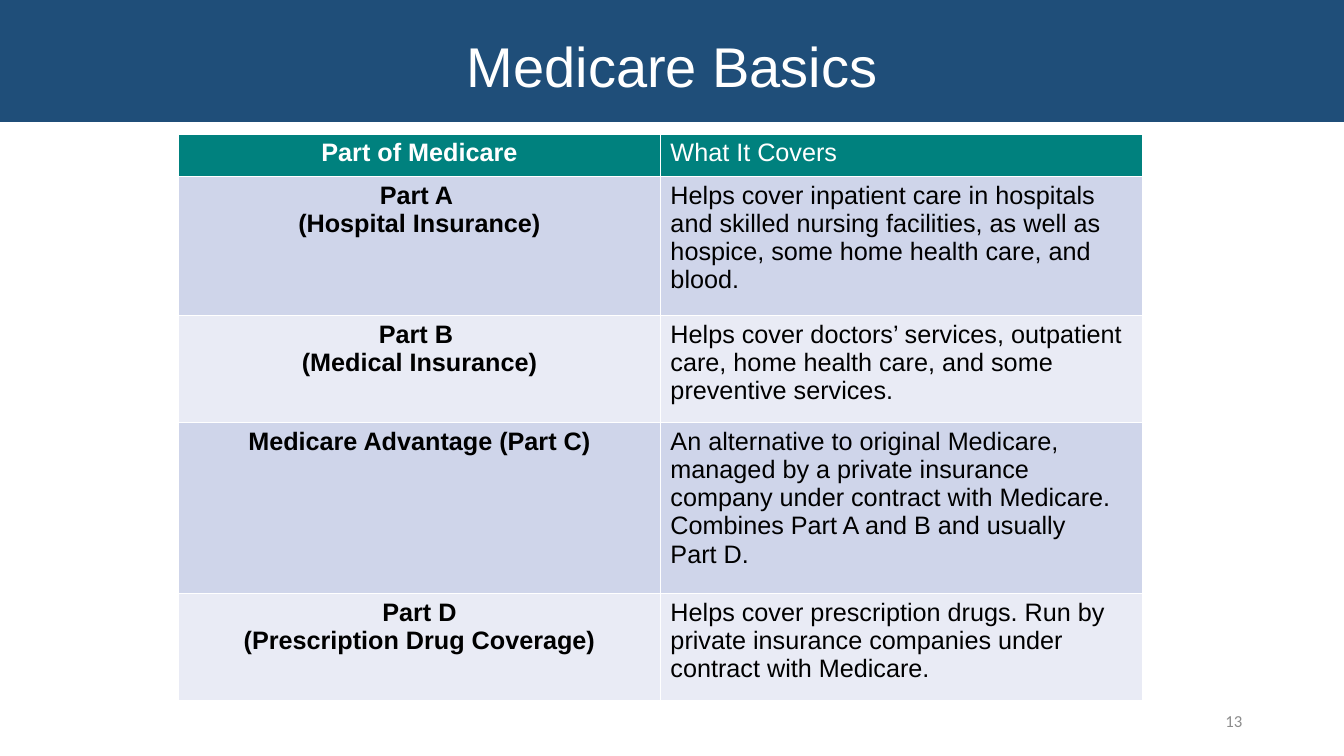
from pptx import Presentation
from pptx.dml.color import RGBColor
from pptx.enum.text import MSO_ANCHOR as Anchor, PP_ALIGN as Align
from pptx.util import Inches, Pt

NAVY = RGBColor(0x1F, 0x4E, 0x79)
TEAL = RGBColor(0x00, 0x81, 0x7E)
BLUE_BAND = RGBColor(0xCF, 0xD5, 0xEA)
PALE_BAND = RGBColor(0xE9, 0xEB, 0xF5)
WHITE = RGBColor(0xFF, 0xFF, 0xFF)
BLACK = RGBColor(0x00, 0x00, 0x00)
GRAY = RGBColor(0x8C, 0x8C, 0x8C)

ROWS = [
    (0.42, "Part of Medicare", "What It Covers"),
    (1.38, "Part A \n(Hospital Insurance)",
     "Helps cover inpatient care in hospitals and skilled nursing facilities, "
     "as well as hospice, some home health care, and blood."),
    (1.06, "Part B \n(Medical Insurance)",
     "Helps cover doctors’ services, outpatient care, home health care, "
     "and some preventive services."),
    (1.7, "Medicare Advantage (Part C)",
     "An alternative to original Medicare, managed by a private insurance "
     "company under contract with Medicare. Combines Part A and B and usually \nPart D."),
    (1.06, "Part D\n(Prescription Drug Coverage)",
     "Helps cover prescription drugs. Run by private insurance companies "
     "under contract with Medicare."),
]


def write(frame, text, size=18, color=BLACK, bold=False, align=Align.LEFT, font="Arial"):
    para = frame.paragraphs[0]
    para.text = text
    para.alignment = align
    for span in para.runs:
        span.font.name = font
        span.font.size = Pt(size)
        span.font.bold = bold
        span.font.color.rgb = color


deck = Presentation()
deck.slide_width = Inches(13.33)
deck.slide_height = Inches(7.5)
page = deck.slides.add_slide(deck.slide_layouts[5])

title = page.shapes.title
title.left, title.top = Inches(0), Inches(0)
title.width, title.height = Inches(13.33), Inches(1.21)
title.fill.solid()
title.fill.fore_color.rgb = NAVY
title.text_frame.vertical_anchor = Anchor.MIDDLE
title.text_frame.margin_top = Inches(0.12)
title.text_frame.margin_bottom = Inches(0.04)
write(title.text_frame, "Medicare Basics", size=40, color=WHITE, align=Align.CENTER)

table = page.shapes.add_table(
    len(ROWS), 2, Inches(1.77), Inches(1.33), Inches(9.56), Inches(5.62)
).table
for column in table.columns:
    column.width = Inches(4.78)

for index, (height, part, coverage) in enumerate(ROWS):
    table.rows[index].height = Inches(height)
    if index == 0:
        fill, color = TEAL, WHITE
    else:
        fill, color = (BLUE_BAND if index % 2 else PALE_BAND), BLACK
    part_cell, coverage_cell = table.cell(index, 0), table.cell(index, 1)
    for cell in (part_cell, coverage_cell):
        cell.fill.solid()
        cell.fill.fore_color.rgb = fill
    write(part_cell.text_frame, part, color=color, bold=True, align=Align.CENTER)
    write(coverage_cell.text_frame, coverage, color=color)

number_box = page.shapes.add_textbox(Inches(9.42), Inches(6.95), Inches(3), Inches(0.4))
number_box.text_frame.word_wrap = True
number_box.text_frame.vertical_anchor = Anchor.MIDDLE
write(number_box.text_frame, "13", size=12, color=GRAY, align=Align.RIGHT, font="Calibri")

deck.save("out.pptx")
